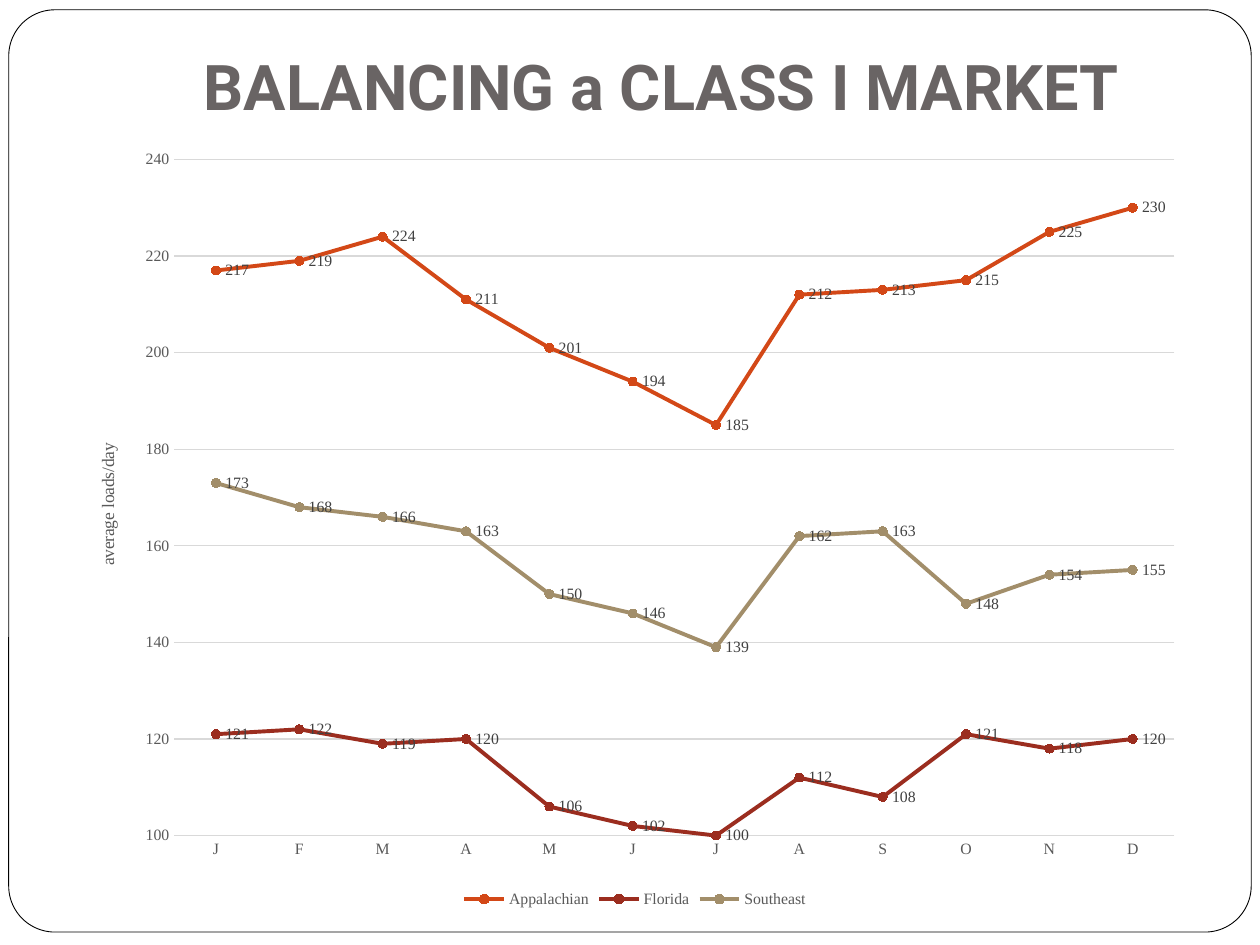
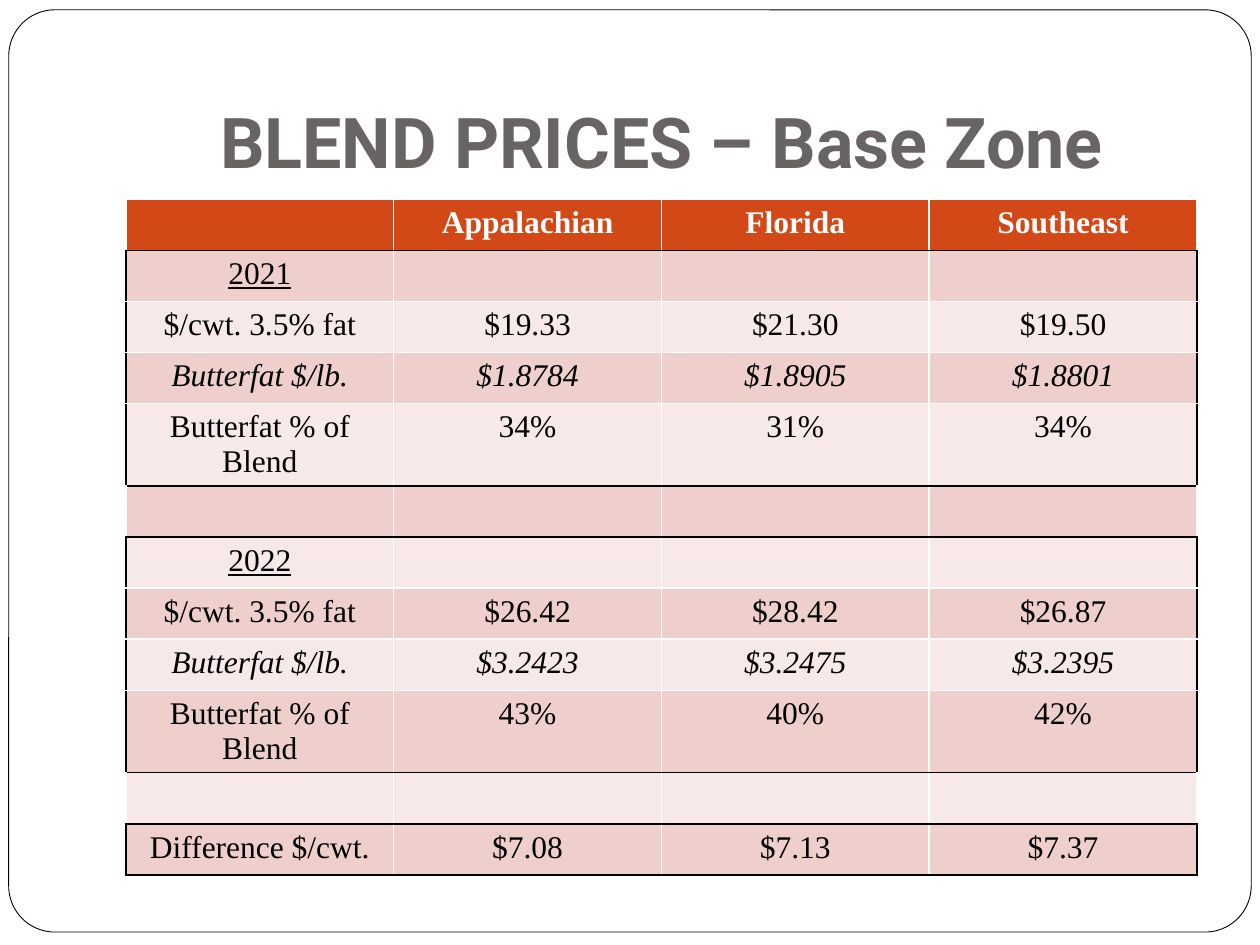
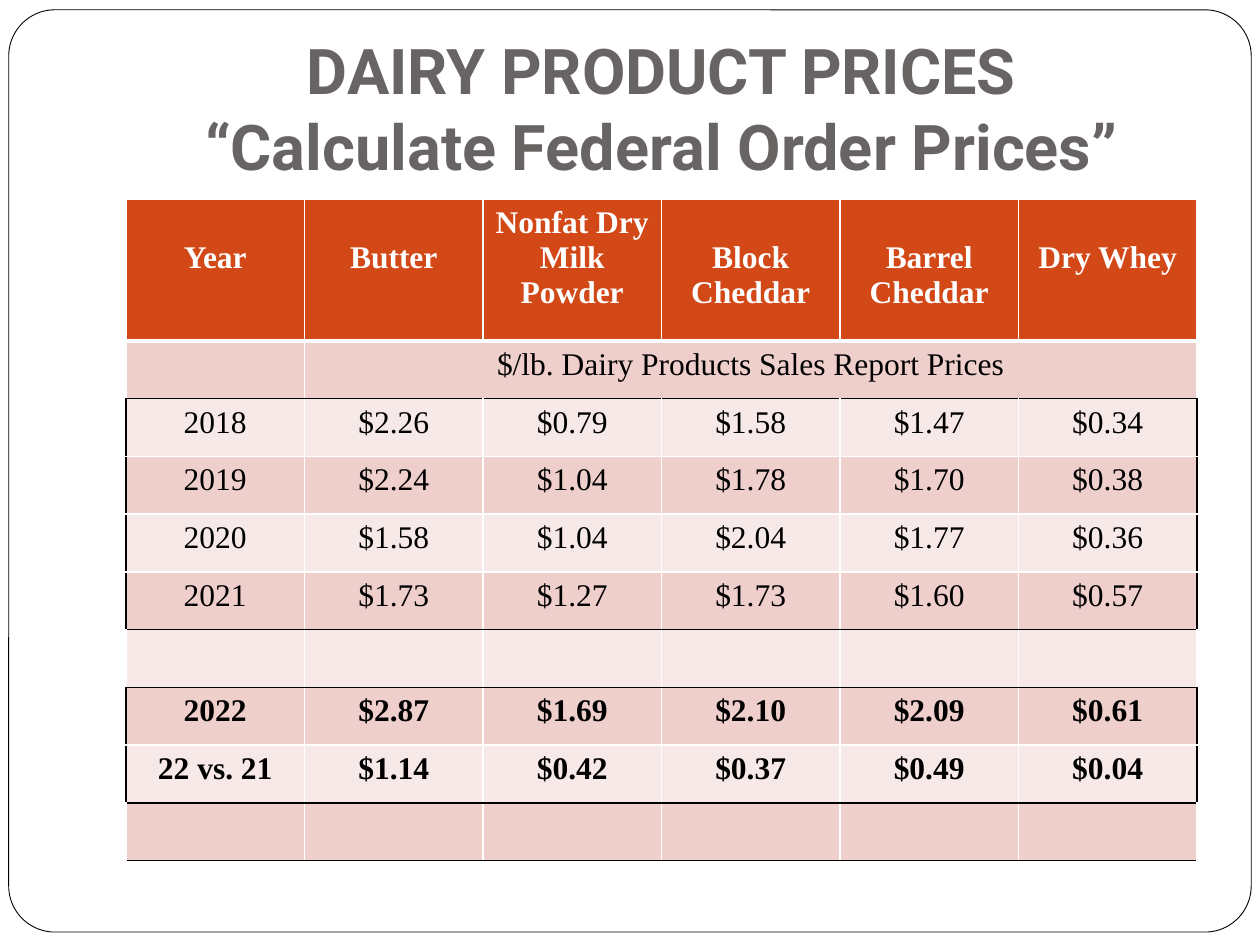
from dataclasses import dataclass

from lxml.etree import SubElement
from pptx import Presentation
from pptx.chart.chart import Chart
from pptx.chart.data import CategoryChartData
from pptx.dml.color import RGBColor
from pptx.enum.chart import (XL_CHART_TYPE, XL_LABEL_POSITION,
                             XL_LEGEND_POSITION, XL_MARKER_STYLE, XL_TICK_MARK)
from pptx.enum.shapes import MSO_SHAPE
from pptx.enum.text import MSO_ANCHOR, MSO_AUTO_SIZE, PP_ALIGN
from pptx.oxml import parse_xml
from pptx.oxml.ns import nsdecls, qn
from pptx.slide import Slide
from pptx.table import _Cell
from pptx.util import Pt


@dataclass(frozen=True)
class Theme:
    head: str = "Roboto"
    body: str = "Times New Roman"
    white: str = "FFFFFF"
    black: str = "000000"
    title: str = "696464"
    orange: str = "D34817"
    red: str = "9B2D1F"
    tan: str = "A28E6A"
    dark: str = "EFCFCC"
    light: str = "F7E9E8"
    grid: str = "D9D9D9"
    axis: str = "595959"
    label: str = "404040"
    cell: float = 18
    small: float = 9
    note: float = 10


@dataclass(frozen=True)
class Row:
    """A table row; the last cell of a short row spans the rest."""
    cells: tuple[str, ...] = ()
    bold: bool = False
    slant: bool = False
    under: bool = False


@dataclass(frozen=True)
class Grid:
    rows: list[Row]
    boxes: list[tuple[int, int]]  # first and last row of each outlined block
    cols: int
    top: float  # height of the header row
    high: float  # height of the other rows
    rule: float = 1  # line width under the header
    drop: bool = False  # start short header labels one line lower


@dataclass(frozen=True)
class Line:
    name: str
    color: str
    vals: tuple[int, ...]


T = Theme()
LEFT, WIDE = 72, 612
LINE = 20  # height of one line of table text


def rgb(code: str) -> RGBColor:
    return RGBColor.from_string(code)


def style(font, size: float, color: str, face: str = T.body, bold: bool = False) -> None:
    font.name, font.size, font.bold = face, Pt(size), bold
    font.color.rgb = rgb(color)


# Shared parts: frame on the master, slide title

def add_frame(slide: Slide, master) -> None:
    frame = slide.shapes.add_shape(MSO_SHAPE.ROUNDED_RECTANGLE,
                                   Pt(5), Pt(5.6), Pt(710), Pt(527))
    frame.adjustments[0] = 0.05
    frame.shadow.inherit = False
    frame.fill.solid()
    frame.fill.fore_color.rgb = rgb(T.white)
    frame.line.color.rgb = rgb(T.black)
    frame.line.width = Pt(0.5)
    master.shapes._spTree.insert(2, frame._element)


def set_title(slide: Slide, text: str, size: float, high: float = 90) -> None:
    title = slide.shapes.title
    title.left, title.top = Pt(LEFT), Pt(21.6)
    title.width, title.height = Pt(WIDE), Pt(high)
    frame = title.text_frame
    frame.text = text
    frame.auto_size = MSO_AUTO_SIZE.NONE
    frame.vertical_anchor = MSO_ANCHOR.BOTTOM
    frame.margin_left = frame.margin_right = frame.margin_bottom = Pt(7.2)
    frame.margin_top = Pt(3.6)
    para = frame.paragraphs[0]
    para.alignment = PP_ALIGN.CENTER
    style(para.font, size, T.title, T.head, True)


# Tables

def set_edge(cell: _Cell, side: str, color: str, width: float = 1) -> None:
    edge = SubElement(cell._tc.get_or_add_tcPr(), qn(f"a:ln{side}"), w=str(Pt(width)))
    fill = SubElement(edge, qn("a:solidFill"))
    SubElement(fill, qn("a:srgbClr"), val=color)


def set_edges(cell: _Cell, grid: Grid, r: int, c: int) -> None:
    firsts = {first for first, _ in grid.boxes}
    lasts = {last for _, last in grid.boxes}
    boxed = any(first <= r <= last for first, last in grid.boxes)
    dark = {
        "L": boxed and c == 0,
        "R": boxed and c == grid.cols - 1,
        "T": r in firsts or r - 1 in lasts,
        "B": r in lasts or r + 1 in firsts or r == len(grid.rows) - 1,
    }
    for side, on in dark.items():
        width = grid.rule if (r, side) in ((0, "B"), (1, "T")) else 1
        set_edge(cell, side, T.black if on else T.white, width)


def add_grid(slide: Slide, grid: Grid) -> None:
    count = len(grid.rows)
    table = slide.shapes.add_table(count, grid.cols, Pt(LEFT), Pt(113.8), Pt(WIDE),
                                   Pt(grid.top + grid.high * (count - 1))).table
    table.horz_banding = False
    for col in table.columns:
        col.width = Pt(WIDE / grid.cols)
    for r, row in enumerate(grid.rows):
        table.rows[r].height = Pt(grid.high if r else grid.top)
        band = (T.dark if r % 2 else T.light) if r else T.orange
        for c in range(grid.cols):
            cell = table.cell(r, c)
            set_edges(cell, grid, r, c)
            cell.fill.solid()
            cell.fill.fore_color.rgb = rgb(band)
            text = row.cells[c] if c < len(row.cells) else ""
            cell.text = text
            para = cell.text_frame.paragraphs[0]
            para.alignment = PP_ALIGN.CENTER
            style(para.font, T.cell, T.black if r else T.white, bold=row.bold)
            para.font.italic, para.font.underline = row.slant, row.under
            if r == 0 and grid.drop and len(text.split()) < 3:
                cell.margin_top = Pt(3.6 + LINE)
        if 0 < len(row.cells) < grid.cols:
            table.cell(r, len(row.cells) - 1).merge(table.cell(r, grid.cols - 1))


# Line chart

def set_plot(chart: Chart, **place: float) -> None:
    area = chart._chartSpace.chart.plotArea
    for old in area.findall(qn("c:layout")):
        area.remove(old)
    modes = '<c:layoutTarget val="inner"/><c:xMode val="edge"/><c:yMode val="edge"/>'
    sizes = "".join(f'<c:{key} val="{val}"/>' for key, val in place.items())
    area.insert(0, parse_xml(f'<c:layout {nsdecls("c")}><c:manualLayout>'
                             f'{modes}{sizes}</c:manualLayout></c:layout>'))


def add_lines(slide: Slide, cats: str, lines: list[Line]) -> None:
    data = CategoryChartData(number_format="0")
    data.categories = list(cats)
    for line in lines:
        data.add_series(line.name, line.vals)
    chart = slide.shapes.add_chart(XL_CHART_TYPE.LINE_MARKERS, Pt(41.8), Pt(77.8),
                                   Pt(642.2), Pt(444.2), data).chart
    style(chart.font, T.note, T.black)
    chart.has_title = False
    chart.has_legend = True
    chart.legend.position = XL_LEGEND_POSITION.BOTTOM
    chart.legend.include_in_layout = False
    style(chart.legend.font, T.small, T.axis)
    set_plot(chart, x=0.09, y=0.03, w=0.89, h=0.87)

    months, loads = chart.category_axis, chart.value_axis
    for axis in (months, loads):
        axis.major_tick_mark = axis.minor_tick_mark = XL_TICK_MARK.NONE
        style(axis.tick_labels.font, T.small, T.axis)
    loads.minimum_scale, loads.maximum_scale, loads.major_unit = 100, 240, 20
    loads.tick_labels.number_format = "0"
    loads.tick_labels.number_format_is_linked = False
    loads.format.line.fill.background()
    for rule in (months.format.line, loads.major_gridlines.format.line):
        rule.color.rgb = rgb(T.grid)
        rule.width = Pt(0.75)
    frame = loads.axis_title.text_frame
    frame.text = "average loads/day"
    style(frame.paragraphs[0].font, T.note, T.axis)

    chart.plots[0].vary_by_categories = False
    for line, item in zip(lines, chart.plots[0].series):
        item.smooth = False
        item.format.line.color.rgb = rgb(line.color)
        item.format.line.width = Pt(2.25)
        mark = item.marker
        mark.style, mark.size = XL_MARKER_STYLE.CIRCLE, 5
        mark.format.fill.solid()
        mark.format.fill.fore_color.rgb = rgb(line.color)
        mark.format.line.color.rgb = rgb(line.color)
        labels = item.data_labels
        labels.show_value = True
        labels.position = XL_LABEL_POSITION.RIGHT
        labels.number_format, labels.number_format_is_linked = "0", False
        style(labels.font, T.small, T.label)


# Content

LOADS = [
    Line("Appalachian", T.orange,
         (217, 219, 224, 211, 201, 194, 185, 212, 213, 215, 225, 230)),
    Line("Florida", T.red,
         (121, 122, 119, 120, 106, 102, 100, 112, 108, 121, 118, 120)),
    Line("Southeast", T.tan,
         (173, 168, 166, 163, 150, 146, 139, 162, 163, 148, 154, 155)),
]


def blend(year: str, price: tuple, fat: tuple, share: tuple) -> list[Row]:
    return [
        Row((year, "", "", ""), under=True),
        Row(("$/cwt. 3.5% fat", *price)),
        Row(("Butterfat $/lb.", *fat), slant=True),
        Row(("Butterfat % of Blend", *share)),
    ]


BLENDS = Grid(
    rows=[
        Row(("", "Appalachian", "Florida", "Southeast"), bold=True),
        *blend("2021", ("$19.33", "$21.30", "$19.50"),
               ("$1.8784", "$1.8905", "$1.8801"), ("34%", "31%", "34%")),
        Row(),
        *blend("2022", ("$26.42", "$28.42", "$26.87"),
               ("$3.2423", "$3.2475", "$3.2395"), ("43%", "40%", "42%")),
        Row(),
        Row(("Difference $/cwt.", "$7.08", "$7.13", "$7.37")),
    ],
    boxes=[(1, 4), (6, 9), (11, 11)], cols=4, top=29.2, high=29.2)

DAIRY = Grid(
    rows=[
        Row(("Year", "Butter", "Nonfat Dry Milk Powder", "Block Cheddar",
             "Barrel Cheddar", "Dry Whey"), bold=True),
        Row(("", "$/lb. Dairy Products Sales Report Prices")),
        Row(("2018", "$2.26", "$0.79", "$1.58", "$1.47", "$0.34")),
        Row(("2019", "$2.24", "$1.04", "$1.78", "$1.70", "$0.38")),
        Row(("2020", "$1.58", "$1.04", "$2.04", "$1.77", "$0.36")),
        Row(("2021", "$1.73", "$1.27", "$1.73", "$1.60", "$0.57")),
        Row(),
        Row(("2022", "$2.87", "$1.69", "$2.10", "$2.09", "$0.61"), bold=True),
        Row(("22 vs. 21", "$1.14", "$0.42", "$0.37", "$0.49", "$0.04"), bold=True),
        Row(),
    ],
    boxes=[(2, 5), (7, 8)], cols=6, top=81, high=33, rule=3, drop=True)


def main() -> None:
    deck = Presentation()
    deck.slide_width, deck.slide_height = Pt(720), Pt(540)
    plain = deck.slide_layouts.get_by_name("Title Only")
    market, zone, dairy = [deck.slides.add_slide(plain) for _ in range(3)]
    add_frame(market, deck.slide_master)

    set_title(market, "BALANCING a CLASS I MARKET", 36, high=56)
    add_lines(market, "JFMAMJJASOND", LOADS)

    set_title(zone, "BLEND PRICES – Base Zone", 40)
    add_grid(zone, BLENDS)

    set_title(dairy, "DAIRY PRODUCT PRICES\v“Calculate Federal Order Prices”", 36)
    add_grid(dairy, DAIRY)

    deck.save("out.pptx")


if __name__ == "__main__":
    main()
